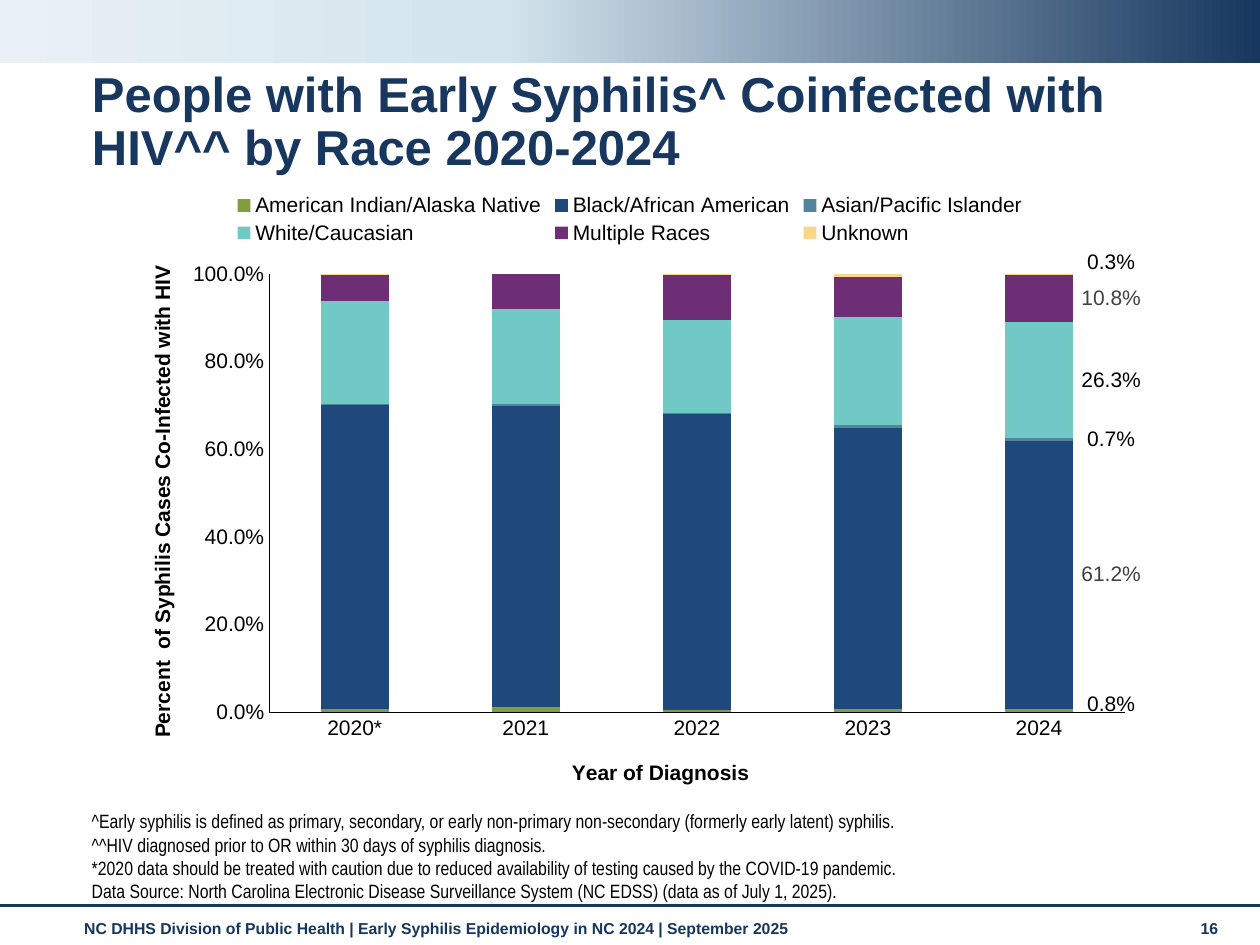
import copy

import lxml.etree
import pptx
import pptx.chart.data
import pptx.dml.color
import pptx.enum.chart
import pptx.enum.shapes
import pptx.enum.text
import pptx.oxml
import pptx.oxml.ns
import pptx.util

COLORS = {
    "navy": "17375E", "footer": "15365E", "sky": "D3E4ED", "mist": "E9F1F6",
    "black": "000000", "gray": "404040", "green": "7F9E3F", "blue": "1F497D",
    "steel": "52849C", "teal": "71C9C5", "purple": "6D2E75", "yellow": "F6D888",
}
qn = pptx.oxml.ns.qn


def style(font, size, color, bold=False, name="Arial"):
    font.size = pptx.util.Pt(size)
    font.name = name
    font.bold = bold
    font.color.rgb = pptx.dml.color.RGBColor.from_string(COLORS[color])


def set_layout(parent, index, **values):
    for old in parent.findall(qn("c:layout")):
        parent.remove(old)
    layout = parent.makeelement(qn("c:layout"))
    manual = lxml.etree.SubElement(layout, qn("c:manualLayout"))
    for tag, value in values.items():
        lxml.etree.SubElement(manual, qn(f"c:{tag}")).set("val", str(value))
    parent.insert(index, layout)


presentation = pptx.Presentation()
presentation.slide_width = pptx.util.Inches(10)
presentation.slide_height = pptx.util.Inches(7.5)
column = presentation.slide_width / 100
row = presentation.slide_height / 100
slide = presentation.slides.add_slide(presentation.slide_layouts[5])

band = slide.shapes.add_shape(
    pptx.enum.shapes.MSO_SHAPE.RECTANGLE, 0, 0, presentation.slide_width, int(6.67 * row))
band.shadow.inherit = False
band.line.fill.background()
band.fill.gradient()
band.fill.gradient_angle = 180
stop_list = band.fill._fill._gradFill.find(qn("a:gsLst"))
stop_list.insert(1, copy.deepcopy(stop_list[0]))
for stop, position, color in zip(band.fill.gradient_stops, (0, 0.6, 1), ("navy", "sky", "mist")):
    stop.position = position
    stop.color.rgb = pptx.dml.color.RGBColor.from_string(COLORS[color])

rule = slide.shapes.add_connector(
    pptx.enum.shapes.MSO_CONNECTOR.STRAIGHT,
    0, int(95.87 * row), presentation.slide_width, int(95.87 * row))
rule.line.width = pptx.util.Pt(1.75)
rule.line.color.rgb = pptx.dml.color.RGBColor.from_string(COLORS["navy"])
lxml.etree.SubElement(rule._element.spPr, qn("a:effectLst"))

title = slide.shapes.title
title.left, title.top = int(6.3 * column), int(6.8 * row)
title.width, title.height = int(92.4 * column), int(8 * row)
title.text = "People with Early Syphilis^ Coinfected with HIV^^ by Race 2020-2024"
title.text_frame.word_wrap = True
title.text_frame.auto_size = pptx.enum.text.MSO_AUTO_SIZE.NONE
title.text_frame.vertical_anchor = pptx.enum.text.MSO_ANCHOR.TOP
heading = title.text_frame.paragraphs[0]
heading.alignment = pptx.enum.text.PP_ALIGN.LEFT
heading.line_spacing = 0.9
style(heading.font, 28, "navy", True)

footnotes = [
    "^Early syphilis is defined as primary, secondary, or early non-primary non-secondary (formerly early latent) syphilis.",
    "^^HIV diagnosed prior to OR within 30 days of syphilis diagnosis.",
    "*2020 data should be treated with caution due to reduced availability of testing caused by the COVID-19 pandemic.",
    "Data Source: North Carolina Electronic Disease Surveillance System (NC EDSS) (data as of July 1, 2025).",
]
footer = ["NC DHHS Division of Public Health | Early Syphilis Epidemiology in NC 2024 | September 2025"]
middle = pptx.enum.text.MSO_ANCHOR.MIDDLE
bottom = pptx.enum.text.MSO_ANCHOR.BOTTOM
text_boxes = [
    (6.3, 87.73, 87.4, 8.4, bottom, footnotes, (11, "black", False, "Arial Narrow")),
    (5.7, 96.27, 87.4, 3.87, middle, footer, (9, "footer", True)),
    (94.3, 96.27, 4.4, 3.87, middle, ["16"], (9, "footer", True)),
]
for left, top, width, height, anchor, lines, look in text_boxes:
    box = slide.shapes.add_textbox(
        int(left * column), int(top * row), int(width * column), int(height * row))
    box.text_frame.word_wrap = True
    box.text_frame.vertical_anchor = anchor
    box.text_frame.text = "\n".join(lines)
    for paragraph in box.text_frame.paragraphs:
        style(paragraph.font, *look)

races = [
    ("American Indian/Alaska Native", (0.007, 0.011, 0.006, 0.007, 0.008), "green", "black", -0.01),
    ("Black/African American", (0.694, 0.689, 0.676, 0.642, 0.612), "blue", "gray", 0),
    ("Asian/Pacific Islander", (0.003, 0.004, 0.002, 0.007, 0.007), "steel", "black", 0),
    ("White/Caucasian", (0.235, 0.216, 0.211, 0.246, 0.263), "teal", "black", 0),
    ("Multiple Races", (0.059, 0.081, 0.103, 0.092, 0.108), "purple", "gray", 0),
    ("Unknown", (0.003, 0, 0.003, 0.006, 0.003), "yellow", "black", -0.02),
]
chart_data = pptx.chart.data.CategoryChartData(number_format="0.0%")
chart_data.categories = ["2020*", "2021", "2022", "2023", "2024"]
for name, values, *_ in races:
    chart_data.add_series(name, values)
chart = slide.shapes.add_chart(
    pptx.enum.chart.XL_CHART_TYPE.COLUMN_STACKED,
    int(9.1 * column), int(19.07 * row), int(81.8 * column), int(66.27 * row), chart_data).chart
style(chart.font, 12, "black")
chart.has_title = False
chart.has_legend = True
chart.legend.position = pptx.enum.chart.XL_LEGEND_POSITION.TOP
chart.legend.include_in_layout = False
style(chart.legend.font, 12, "black")
set_layout(chart._chartSpace.chart.plotArea, 0, layoutTarget="inner",
           xMode="edge", yMode="edge", x=0.15, y=0.15, w=0.83, h=0.7)

axes = [
    (chart.category_axis, "Year of Diagnosis", 0.44, 0.92),
    (chart.value_axis, "Percent  of Syphilis Cases Co-Infected with HIV", 0.03, 0.13),
]
for axis, caption, x, y in axes:
    axis.has_major_gridlines = False
    axis.major_tick_mark = pptx.enum.chart.XL_TICK_MARK.NONE
    axis.minor_tick_mark = pptx.enum.chart.XL_TICK_MARK.NONE
    axis.format.line.width = pptx.util.Pt(0.75)
    axis.format.line.color.rgb = pptx.dml.color.RGBColor.from_string(COLORS["black"])
    style(axis.tick_labels.font, 12, "black")
    axis.axis_title.text_frame.text = caption
    style(axis.axis_title.text_frame.paragraphs[0].font, 12, "black", True)
    set_layout(axis.axis_title._element, 1, xMode="edge", yMode="edge", x=x, y=y)
chart.value_axis.minimum_scale = 0
chart.value_axis.maximum_scale = 1
chart.value_axis.major_unit = 0.2
chart.value_axis.tick_labels.number_format = "0.0%"
chart.value_axis.tick_labels.number_format_is_linked = False

plot = chart.plots[0]
plot.gap_width = 150
plot.overlap = 100
for series, (_, _, color, label_color, shift) in zip(plot.series, races):
    series.format.fill.solid()
    series.format.fill.fore_color.rgb = pptx.dml.color.RGBColor.from_string(COLORS[color])
    labels = series.data_labels
    labels.show_value = False
    labels.number_format = "0.0%"
    labels.number_format_is_linked = False
    for leader in labels._element.findall(qn("c:showLeaderLines")):
        leader.set("val", "0")
    label = series.points[4].data_label
    style(label.font, 12, label_color)
    set_layout(labels._element.find(qn("c:dLbl")), 1, x=0.07, y=shift)

presentation.save("out.pptx")
